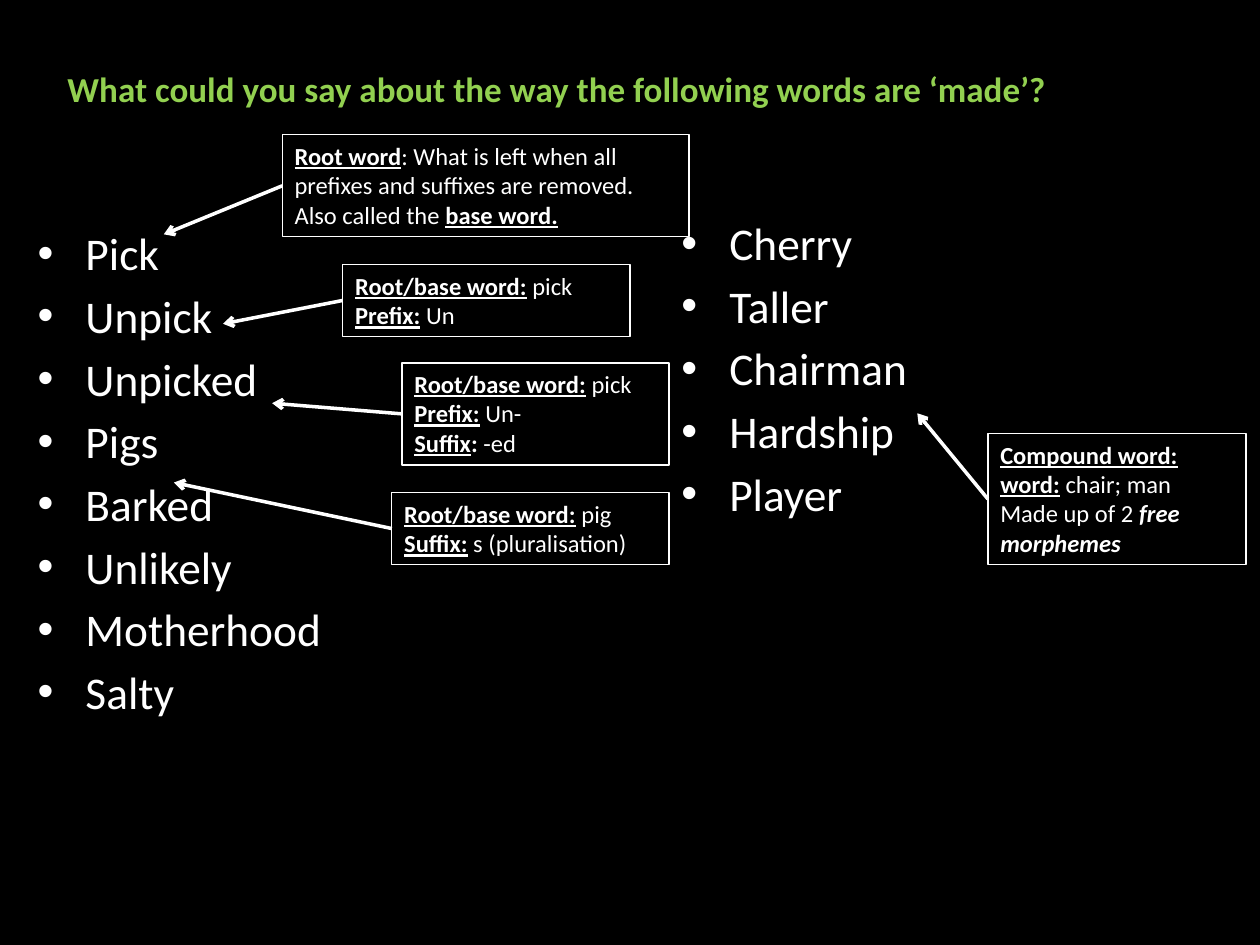
from lxml import etree
from pptx import Presentation
from pptx.dml.color import RGBColor
from pptx.enum.shapes import MSO_CONNECTOR, MSO_SHAPE
from pptx.enum.text import MSO_ANCHOR, PP_ALIGN
from pptx.oxml.ns import qn
from pptx.util import Inches, Pt

COLORS = {"background": "000000", "title": "92D050", "text": "FFFFFF"}
FONT = "Calibri"
TITLE = "What could you say about the way the following words are ‘made’?"
WORD_LISTS = [
    (0.2, 1.74, ["Pick", "Unpick", "Unpicked", "Pigs", "Barked", "Unlikely", "Motherhood", "Salty"]),
    (5.31, 1.66, ["Cherry", "Taller", "Chairman", "Hardship", "Player"]),
]
CALLOUTS = [
    {"box": (2.24, 1.07, 3.23, 0.81), "target": (1.3, 1.86), "lines": [
        [("Root word", "bu"),
         (": What is left when all prefixes and suffixes are removed. Also called the ", ""),
         ("base word.", "bu")]]},
    {"box": (2.72, 2.1, 2.28, 0.57), "target": (1.77, 2.57), "lines": [
        [("Root/base word:", "bu"), (" pick", "")],
        [("Prefix:", "bu"), (" Un", "")]]},
    {"box": (3.19, 2.88, 2.12, 0.81), "target": (2.16, 3.2), "lines": [
        [("Root/base word:", "bu"), (" pick", "")],
        [("Prefix:", "bu"), (" Un-", "")],
        [("Suffix", "bu"), (":", "b"), (" -ed", "")]]},
    {"box": (3.11, 3.91, 2.2, 0.57), "target": (1.38, 3.83), "lines": [
        [("Root/base word:", "bu"), (" pig", "")],
        [("Suffix:", "bu"), (" s (pluralisation)", "")]]},
    {"box": (7.84, 3.44, 2.05, 1.04), "target": (7.28, 3.28), "lines": [
        [("Compound word: word:", "bu"), (" chair; man", "")],
        [("Made up of 2 ", ""), ("free morphemes", "bi")]]},
]


def color(name):
    return RGBColor.from_string(COLORS[name])


def style_font(font, size, color_name="text"):
    font.name = FONT
    font.size = Pt(size)
    font.color.rgb = color(color_name)


def paragraphs_for(frame, items):
    for index, item in enumerate(items):
        yield (frame.add_paragraph() if index else frame.paragraphs[0]), item


def add_title(slide):
    frame = slide.shapes.add_textbox(Inches(-0.04), Inches(0.3), Inches(8.92), Inches(1.08)).text_frame
    frame.word_wrap = True
    frame.vertical_anchor = MSO_ANCHOR.MIDDLE
    frame.margin_bottom = Inches(0.33)
    paragraph = frame.paragraphs[0]
    paragraph.text = TITLE
    paragraph.alignment = PP_ALIGN.CENTER
    style_font(paragraph.font, 20, "title")
    paragraph.font.bold = True


def add_word_list(slide, left, top, words):
    frame = slide.shapes.add_textbox(Inches(left), Inches(top), Inches(4.25), Inches(5)).text_frame
    frame.word_wrap = True
    for paragraph, word in paragraphs_for(frame, words):
        paragraph.text = word
        paragraph.space_before = Pt(4.7)
        style_font(paragraph.font, 25.9)
        properties = paragraph._p.get_or_add_pPr()
        properties.set("marL", str(Inches(0.38)))
        properties.set("indent", str(Inches(-0.38)))
        bullet_font = etree.Element(qn("a:buFont"), typeface="Arial")
        bullet = etree.Element(qn("a:buChar"), char="•")
        position = list(properties).index(properties.find(qn("a:spcBef"))) + 1
        properties[position:position] = [bullet_font, bullet]


def add_callout(slide, box, lines):
    shape = slide.shapes.add_shape(MSO_SHAPE.RECTANGLE, *map(Inches, box))
    shape.shadow.inherit = False
    shape.fill.background()
    shape.line.color.rgb = color("text")
    shape.line.width = Pt(0.75)
    frame = shape.text_frame
    frame.word_wrap = True
    frame.vertical_anchor = MSO_ANCHOR.TOP
    for paragraph, runs in paragraphs_for(frame, lines):
        paragraph.alignment = PP_ALIGN.LEFT
        style_font(paragraph.font, 14)
        for text, marks in runs:
            run = paragraph.add_run()
            run.text = text
            run.font.bold = "b" in marks
            run.font.italic = "i" in marks
            run.font.underline = "u" in marks


def add_arrow(slide, box, target):
    left, top, _, height = box
    points = (left, top + height / 2, *target)
    arrow = slide.shapes.add_connector(MSO_CONNECTOR.STRAIGHT, *map(Inches, points))
    arrow.line.color.rgb = color("text")
    arrow.line.width = Pt(2)
    etree.SubElement(arrow.line._get_or_add_ln(), qn("a:tailEnd"), type="arrow")
    etree.SubElement(arrow._element.spPr, qn("a:effectLst"))


def main():
    presentation = Presentation()
    presentation.slide_width = Inches(10)
    presentation.slide_height = Inches(7.5)
    slide = presentation.slides.add_slide(presentation.slide_layouts[6])
    slide.background.fill.solid()
    slide.background.fill.fore_color.rgb = color("background")
    add_title(slide)
    for left, top, words in WORD_LISTS:
        add_word_list(slide, left, top, words)
    for callout in CALLOUTS:
        add_callout(slide, callout["box"], callout["lines"])
    for callout in CALLOUTS:
        add_arrow(slide, callout["box"], callout["target"])
    presentation.save("out.pptx")


if __name__ == "__main__":
    main()
